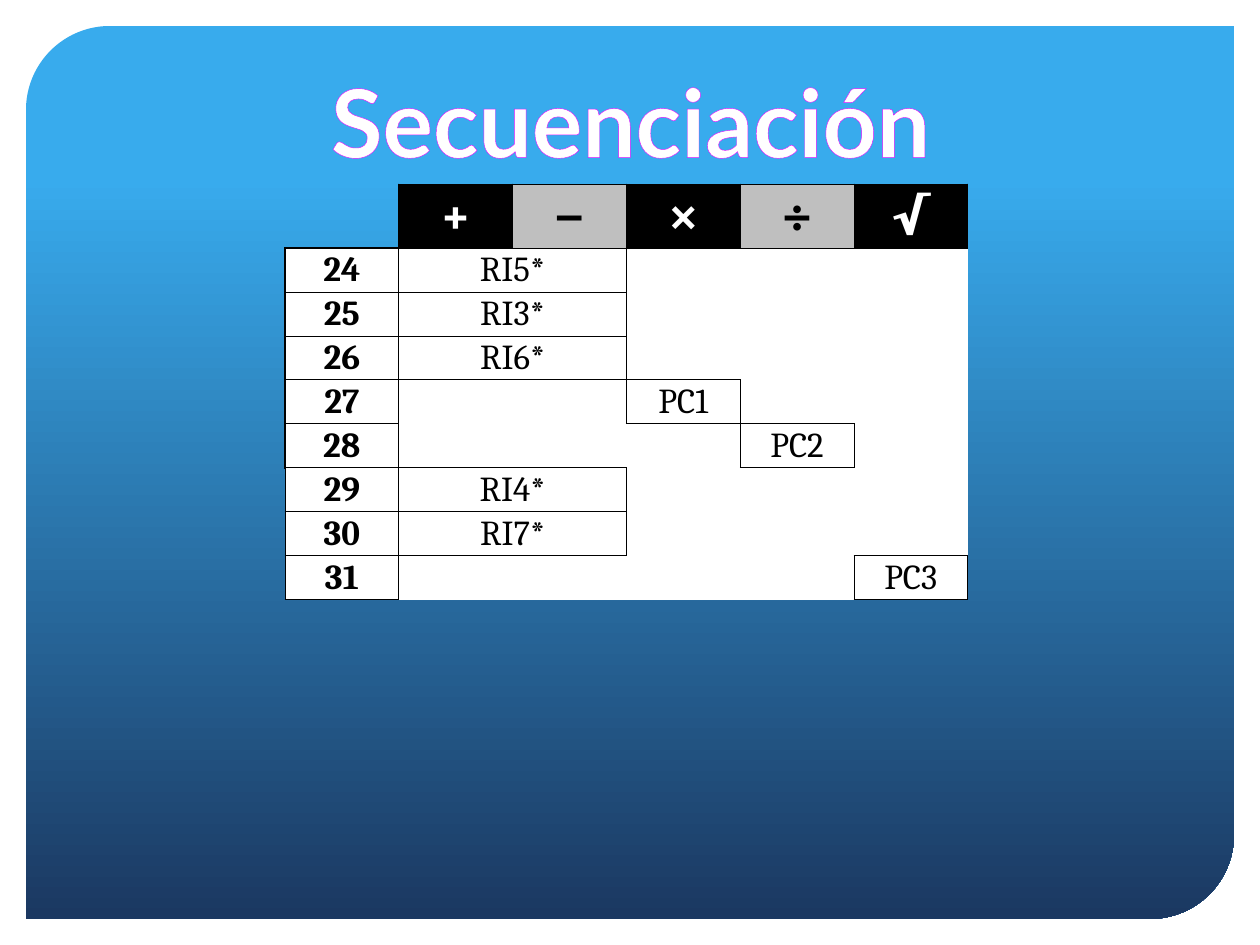
from dataclasses import dataclass

from lxml import etree
from pptx import Presentation
from pptx.dml.color import RGBColor
from pptx.enum.shapes import MSO_SHAPE
from pptx.enum.text import MSO_ANCHOR, MSO_AUTO_SIZE, PP_ALIGN
from pptx.oxml.ns import qn
from pptx.util import Emu, Pt

DIAGONAL_ROUND = MSO_SHAPE.ROUND_2_DIAG_RECTANGLE
CENTER = PP_ALIGN.CENTER
MIDDLE = MSO_ANCHOR.MIDDLE
FIT_SHAPE = MSO_AUTO_SIZE.SHAPE_TO_FIT_TEXT
PX = 914400 / 126


@dataclass(frozen=True)
class Theme:
    sky: str = "38ABED"
    navy: str = "1B3861"
    white: str = "FFFFFF"
    black: str = "000000"
    grey: str = "BFBFBF"
    glow: str = "E113FF"
    title_font: str = "Lato"
    table_font: str = "Cambria"
    title_size: int = 54
    sign_size: int = 30
    cell_size: int = 20
    thin_border: float = 0.5
    border: float = 1


THEME = Theme()
SIGNS = ["+", "−", "×", "÷", "√"]
SESSIONS = [
    ("24", "RI5*", 1, 2),
    ("25", "RI3*", 1, 2),
    ("26", "RI6*", 1, 2),
    ("27", "PC1", 3, 1),
    ("28", "PC2", 4, 1),
    ("29", "RI4*", 1, 2),
    ("30", "RI7*", 1, 2),
    ("31", "PC3", 5, 1),
]
FIRST_STAGE = SESSIONS[:5]
EMPTY_BLOCK = (1, 3, 3, 5)
HEADER_HEIGHT = 64
ROW_HEIGHT = 44
SIDES = {"a:lnL": (0, -1), "a:lnR": (0, 1), "a:lnT": (-1, 0), "a:lnB": (1, 0)}


def px(length):
    return Emu(round(length * PX))


def rgb(color):
    return RGBColor.from_string(color)


def add_line(parent, tag, width, color=None):
    line = etree.SubElement(parent, qn(tag), w=str(Pt(width)))
    if color:
        solid = etree.SubElement(line, qn("a:solidFill"))
        etree.SubElement(solid, qn("a:srgbClr"), val=color)
    else:
        etree.SubElement(line, qn("a:noFill"))
    return line


def style_font(font, name, size, color, bold):
    font.name = name
    font.size = Pt(size)
    font.bold = bold
    font.color.rgb = rgb(color)


def add_panel(slide, box):
    panel = slide.shapes.add_shape(DIAGONAL_ROUND, *map(px, box))
    panel.shadow.inherit = False
    panel.adjustments[0] = 0.094
    panel.adjustments[1] = 0
    panel.line.fill.background()
    panel.fill.gradient()
    panel.fill.gradient_angle = 270
    stops = panel.fill.gradient_stops
    for stop, position, color in zip(stops, (0.17, 1), (THEME.sky, THEME.navy)):
        stop.position = position
        stop.color.rgb = rgb(color)


def add_title(slide, box):
    title = slide.shapes.add_textbox(*map(px, box))
    frame = title.text_frame
    frame.text = "Secuenciación"
    frame.word_wrap = False
    frame.auto_size = FIT_SHAPE
    paragraph = frame.paragraphs[0]
    paragraph.alignment = CENTER
    run = paragraph.runs[0]
    style_font(run.font, THEME.title_font, THEME.title_size, THEME.white, True)
    properties = run.font._element
    properties.insert(0, add_line(properties, "a:ln", 1, THEME.glow))


def draw_borders(cell, row, column, boxed, border):
    properties = cell._tc.get_or_add_tcPr()
    for tag, (down, right) in SIDES.items():
        visible = (row, column) in boxed or (row + down, column + right) in boxed
        add_line(properties, tag, border, THEME.black if visible else None)


def fill_cell(cell, color):
    if color:
        cell.fill.solid()
        cell.fill.fore_color.rgb = rgb(color)
    else:
        cell.fill.background()


def write_cell(cell, text, size, color, bold):
    cell.text_frame.text = text
    paragraph = cell.text_frame.paragraphs[0]
    paragraph.alignment = CENTER
    style_font(paragraph.runs[0].font, THEME.table_font, size, color, bold)


def add_schedule(slide, left, top, width, sessions, border):
    row_count, column_count = len(sessions) + 1, len(SIGNS) + 1
    height = HEADER_HEIGHT + ROW_HEIGHT * len(sessions)
    frame = slide.shapes.add_table(
        row_count, column_count, *map(px, (left, top, width, height))
    )
    table = frame.table
    table.first_row = table.horz_banding = False
    for index, row in enumerate(table.rows):
        row.height = px(ROW_HEIGHT if index else HEADER_HEIGHT)
    for column in table.columns:
        column.width = px(width / column_count)

    boxed = {(0, column) for column in range(1, column_count)}
    for row, (_, _, start, span) in enumerate(sessions, 1):
        boxed.add((row, 0))
        boxed.update((row, start + offset) for offset in range(span))

    for row in range(row_count):
        for column in range(column_count):
            cell = table.cell(row, column)
            cell.margin_left = cell.margin_right = cell.margin_top = px(1)
            cell.margin_bottom = 0
            cell.vertical_anchor = MIDDLE
            draw_borders(cell, row, column, boxed, border if row else THEME.thin_border)
            fill_cell(cell, THEME.white if row else None)

    for column, sign in enumerate(SIGNS, 1):
        fill, ink = (THEME.black, THEME.white) if column % 2 else (THEME.grey, THEME.black)
        fill_cell(table.cell(0, column), fill)
        write_cell(table.cell(0, column), sign, THEME.sign_size, ink, True)

    for row, (number, activity, start, span) in enumerate(sessions, 1):
        write_cell(table.cell(row, 0), number, THEME.cell_size, THEME.black, True)
        if span > 1:
            table.cell(row, start).merge(table.cell(row, start + span - 1))
        write_cell(table.cell(row, start), activity, THEME.cell_size, THEME.black, False)

    first_row, first_column, last_row, last_column = EMPTY_BLOCK
    table.cell(first_row, first_column).merge(table.cell(last_row, last_column))


def main():
    presentation = Presentation()
    presentation.slide_width = px(1260)
    presentation.slide_height = px(945)
    slide = presentation.slides.add_slide(presentation.slide_layouts[6])
    add_panel(slide, (26, 26, 1208, 893))
    add_title(slide, (300, 57, 661, 127))
    for sessions, border in ((FIRST_STAGE, THEME.border), (SESSIONS, THEME.thin_border)):
        add_schedule(slide, 285, 184, 683, sessions, border)
    presentation.save("out.pptx")


if __name__ == "__main__":
    main()
